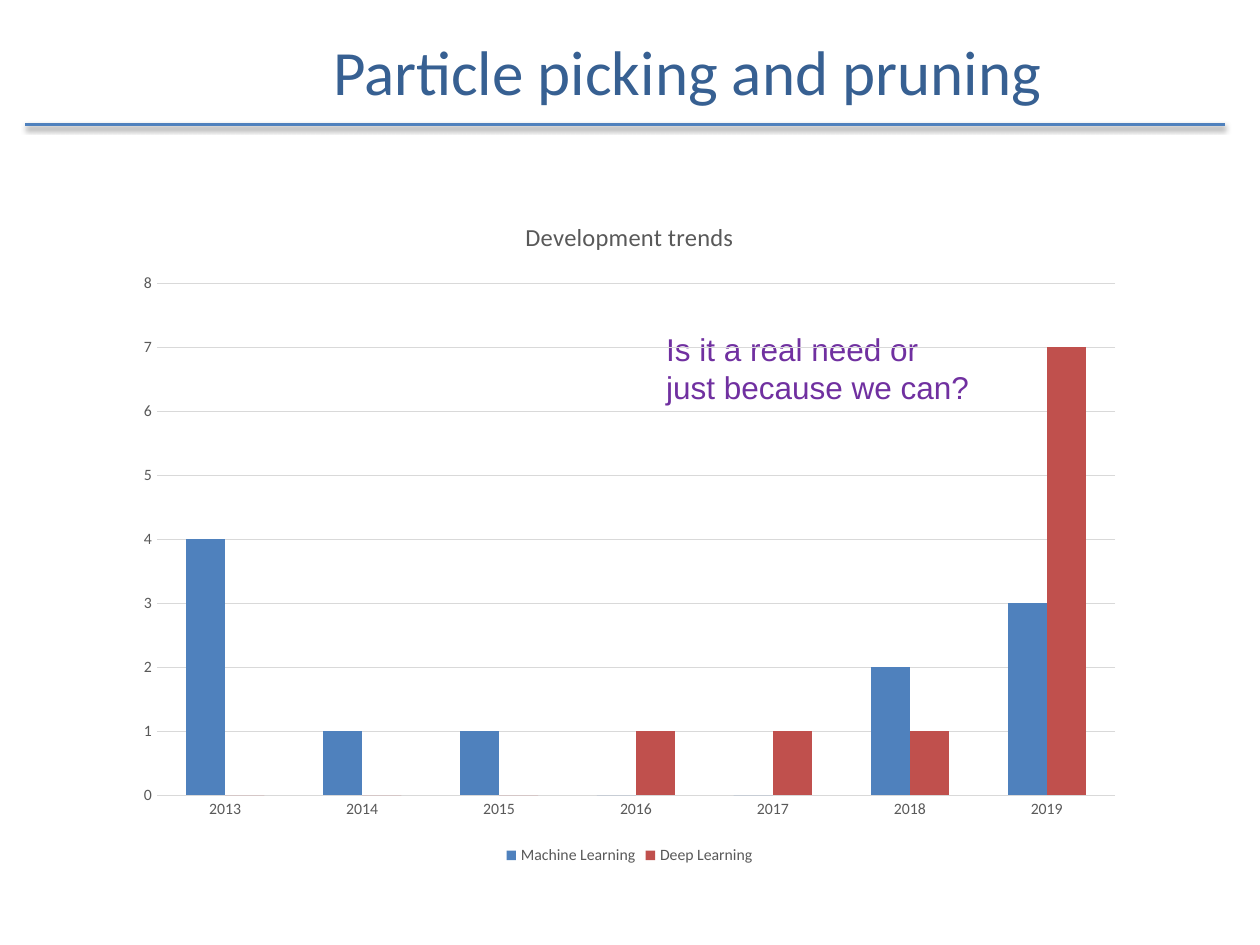
import dataclasses
import typing

import lxml.etree
import pptx
import pptx.chart.data
import pptx.dml.color
import pptx.enum.chart
import pptx.enum.shapes
import pptx.enum.text
import pptx.oxml
import pptx.oxml.ns
import pptx.util

Cm = pptx.util.Cm
Pt = pptx.util.Pt

COLORS = {
    "blue": "4F81BD",
    "red": "C0504D",
    "title": "376092",
    "question": "7030A0",
    "label": "595959",
    "grid": "D9D9D9",
    "shadow": "000000",
}


@dataclasses.dataclass(frozen=True)
class Box:
    left: float
    top: float
    width: float
    height: float

    def lengths(self) -> list:
        return [Cm(v) for v in dataclasses.astuple(self)]


@dataclasses.dataclass(frozen=True)
class Series:
    name: str
    values: tuple
    color: str


TITLE_BOX = Box(3.58, 0.33, 20.55, 2.16)
QUESTION_BOX = Box(13.18, 6.53, 7.11, 1.8)
CHART_BOX = Box(2.49, 3.94, 20.4, 13.59)
YEARS = [str(year) for year in range(2013, 2020)]
SERIES = [
    Series("Machine Learning", (4, 1, 1, 0, 0, 2, 3), "blue"),
    Series("Deep Learning", (0, 0, 0, 1, 1, 1, 7), "red"),
]


def rgb(name: str) -> pptx.dml.color.RGBColor:
    return pptx.dml.color.RGBColor.from_string(COLORS[name])


def set_attrs(obj: typing.Any, values: dict) -> None:
    for key, value in values.items():
        setattr(obj, key, value)


def set_font(font: typing.Any, name: str, size: float, color: str) -> None:
    set_attrs(font, {"name": name, "size": Pt(size), "bold": False})
    font.color.rgb = rgb(color)


def add_rule(slide: typing.Any) -> None:
    y = Cm(2.51)
    line = slide.shapes.add_connector(
        pptx.enum.shapes.MSO_CONNECTOR.STRAIGHT, Cm(0.51), y, Cm(24.69), y
    )
    line.line.color.rgb = rgb("blue")
    line.line.width = Pt(2)
    effects = pptx.oxml.parse_xml(
        f'<a:effectLst {pptx.oxml.ns.nsdecls("a")}>'
        f'<a:outerShdw blurRad="{Pt(3.1)}" dist="{Pt(1.6)}" dir="5400000" rotWithShape="0">'
        f'<a:srgbClr val="{COLORS["shadow"]}"><a:alpha val="38000"/></a:srgbClr>'
        "</a:outerShdw></a:effectLst>"
    )
    line._element.spPr.append(effects)


def add_title(slide: typing.Any) -> None:
    sp = slide.shapes.title
    set_attrs(sp, dict(zip(("left", "top", "width", "height"), TITLE_BOX.lengths())))
    tf = sp.text_frame
    tf.text = "Particle picking and pruning"
    tf.vertical_anchor = pptx.enum.text.MSO_ANCHOR.MIDDLE
    p = tf.paragraphs[0]
    p.alignment = pptx.enum.text.PP_ALIGN.CENTER
    set_font(p.runs[0].font, "Calibri", 36, "title")


def add_question(slide: typing.Any) -> None:
    tf = slide.shapes.add_textbox(*QUESTION_BOX.lengths()).text_frame
    set_attrs(tf, {
        "word_wrap": True,
        "auto_size": pptx.enum.text.MSO_AUTO_SIZE.SHAPE_TO_FIT_TEXT,
        "text": "Is it a real need or\njust because we can?",
    })
    for p in tf.paragraphs:
        set_font(p.runs[0].font, "Arial", 18, "question")


def format_axis(axis: typing.Any) -> None:
    set_attrs(axis, {
        "major_tick_mark": pptx.enum.chart.XL_TICK_MARK.NONE,
        "minor_tick_mark": pptx.enum.chart.XL_TICK_MARK.NONE,
    })
    set_font(axis.tick_labels.font, "Calibri", 9, "label")
    axis.format.line.fill.background()


def add_trends(slide: typing.Any) -> None:
    data = pptx.chart.data.CategoryChartData()
    data.categories = YEARS
    for s in SERIES:
        data.add_series(s.name, s.values)
    chart = slide.shapes.add_chart(
        pptx.enum.chart.XL_CHART_TYPE.COLUMN_CLUSTERED, *CHART_BOX.lengths(), data
    ).chart
    set_attrs(chart.font, {"name": "Calibri", "size": Pt(10)})

    chart.has_title = True
    tf = chart.chart_title.text_frame
    tf.text = "Development trends"
    set_font(tf.paragraphs[0].runs[0].font, "Calibri", 14, "label")
    chart.chart_title.include_in_layout = False

    chart.has_legend = True
    set_attrs(chart.legend, {
        "position": pptx.enum.chart.XL_LEGEND_POSITION.BOTTOM,
        "include_in_layout": False,
    })
    set_font(chart.legend.font, "Calibri", 9, "label")

    for axis in (chart.category_axis, chart.value_axis):
        format_axis(axis)
    set_attrs(chart.value_axis, {
        "minimum_scale": 0, "maximum_scale": 8, "major_unit": 1,
        "has_major_gridlines": True,
    })
    grid = chart.value_axis.major_gridlines.format.line
    grid.color.rgb = rgb("grid")
    grid.width = Pt(0.75)

    plot = chart.plots[0]
    set_attrs(plot, {"gap_width": 150, "overlap": 0, "vary_by_categories": False})
    for s, column in zip(SERIES, plot.series):
        column.format.fill.solid()
        column.format.fill.fore_color.rgb = rgb(s.color)


def main() -> None:
    prs = pptx.Presentation()
    set_attrs(prs, {"slide_width": Cm(25.4), "slide_height": Cm(19.05)})
    slide = prs.slides.add_slide(prs.slide_layouts[5])
    add_rule(slide)
    add_title(slide)
    add_question(slide)
    add_trends(slide)
    prs.save("out.pptx")


if __name__ == "__main__":
    main()
